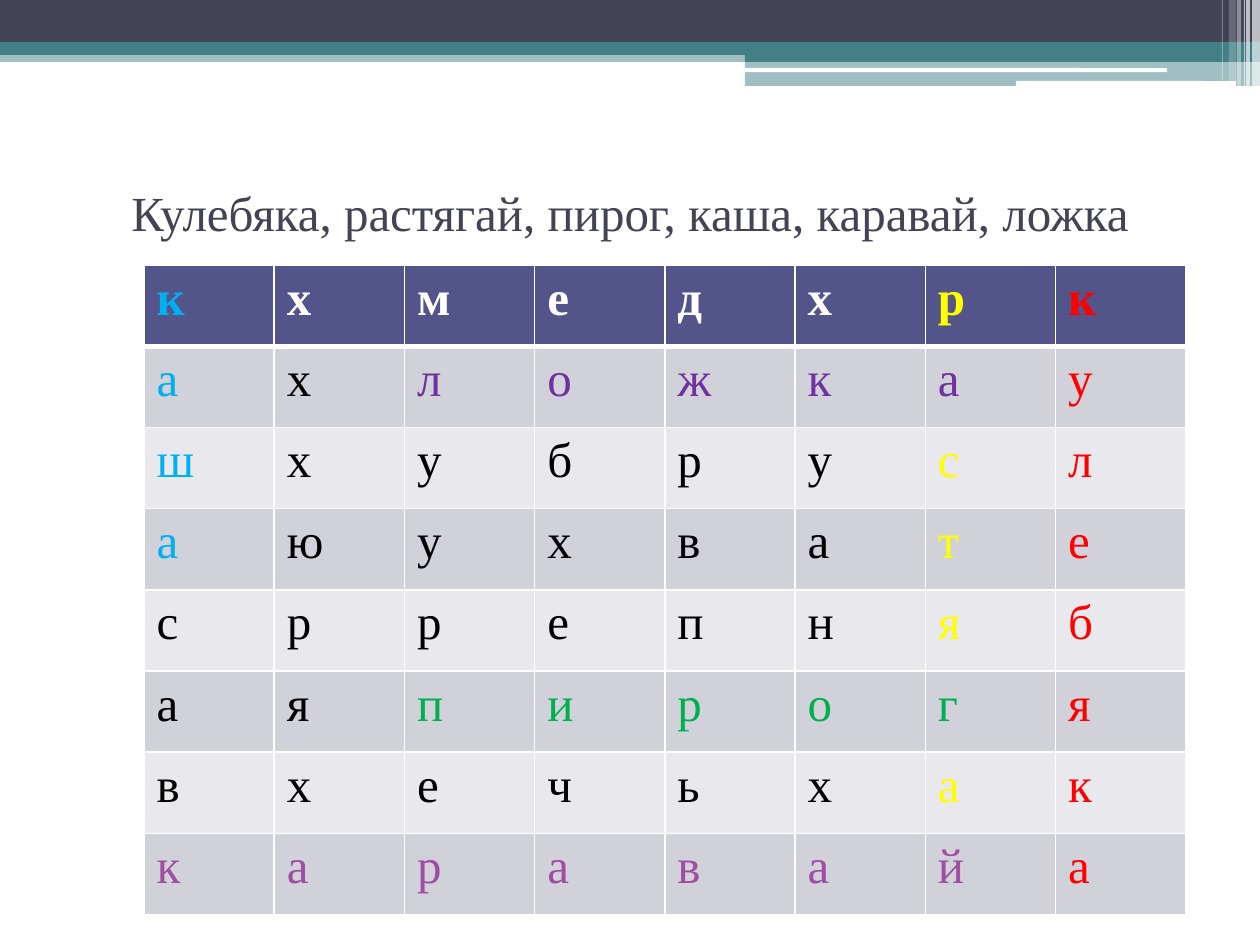
from dataclasses import dataclass

from lxml.etree import SubElement
from pptx import Presentation
from pptx.dml.color import RGBColor
from pptx.enum.shapes import MSO_SHAPE as Shape
from pptx.enum.text import MSO_ANCHOR as Anchor, PP_ALIGN as Align
from pptx.oxml.ns import qn
from pptx.util import Emu, Pt

PX_PER_INCH = 126


@dataclass(frozen=True)
class Theme:
    font: str = "Times New Roman"
    size: int = 28
    dark: str = "424456"
    teal: str = "438086"
    white: str = "FFFFFF"
    header: str = "53548A"
    bands: tuple = ("D1D1DA", "E9E9ED")
    thin: int = 1
    thick: int = 3


THEME = Theme()

# Each found word has its own letter colour
INKS = {
    "w": "FFFFFF",  # header letters
    ".": "000000",  # letters outside the words
    "b": "00B0F0",  # каша
    "v": "7030A0",  # ложка
    "y": "FFFF00",  # растягай
    "r": "FF0000",  # кулебяка
    "g": "00B050",  # пирог
    "p": "A04DA3",  # каравай
}

# Letters of a row and the ink of each letter
PUZZLE = [
    ("кхмедхрк", "bwwwwwyr"),
    ("ахложкау", "b.vvvvvr"),
    ("шхубрусл", "b.....yr"),
    ("аюухвате", "b.....yr"),
    ("сррепняб", "......yr"),
    ("аяпирогя", "..gggggr"),
    ("вхечьхак", "......yr"),
    ("каравайа", "pppppppr"),
]

# Left, top, width, height, colour, opacity in percent
BANDS = [
    (0, 50, 1260, 12, THEME.teal, 50),
    (0, 0, 1260, 42, THEME.dark, 100),
    (0, 42, 1260, 13, THEME.teal, 100),
    (745, 49, 515, 13, THEME.teal, 100),
    (745, 61, 515, 25, THEME.teal, 50),
]
PILLS = [
    (745, 68, 422, 4, THEME.white, 100),
    (1016, 81, 220, 5, THEME.white, 100),
]
STRIPES = [
    (1252, 0, 8, 86, THEME.white, 65),
    (1246, 0, 4, 86, THEME.white, 65),
    (1244, 0, 1, 86, THEME.white, 60),
    (1237, 0, 4, 86, THEME.white, 40),
    (1229, 0, 7, 81, THEME.white, 20),
    (1222, 0, 1, 81, THEME.white, 30),
]


def px(n):
    return Emu(round(n * 914400 / PX_PER_INCH))


def rgb(code):
    return RGBColor.from_string(code)


def style_run(r, color, bold=False):
    r.font.name = THEME.font
    r.font.size = Pt(THEME.size)
    r.font.bold = bold
    r.font.color.rgb = rgb(color)


def add_bar(slide, kind, left, top, width, height, color, opacity):
    sp = slide.shapes.add_shape(kind, px(left), px(top), px(width), px(height))
    sp.shadow.inherit = False
    sp.line.fill.background()
    sp.fill.solid()
    sp.fill.fore_color.rgb = rgb(color)
    if opacity < 100:
        clr = sp.fill._xPr.find(qn("a:solidFill"))[0]
        SubElement(clr, qn("a:alpha"), val=str(opacity * 1000))


def add_title(slide, text, left, top, width, height):
    box = slide.shapes.add_textbox(px(left), px(top), px(width), px(height))
    tf = box.text_frame
    tf.word_wrap = True
    tf.vertical_anchor = Anchor.MIDDLE
    tf.text = text
    p = tf.paragraphs[0]
    p.alignment = Align.CENTER
    style_run(p.runs[0], THEME.dark)


def set_borders(cell, top, bottom):
    tc_pr = cell._tc.get_or_add_tcPr()
    sides = {"L": THEME.thin, "R": THEME.thin, "T": top, "B": bottom}
    for side, width in sides.items():
        ln = SubElement(tc_pr, qn(f"a:ln{side}"), w=str(Pt(width)))
        fill = SubElement(ln, qn("a:solidFill"))
        SubElement(fill, qn("a:srgbClr"), val=THEME.white)


def fill_cell(cell, row, letter, ink):
    header = row == 0
    # The heavy rule lies between the header and the first body row
    set_borders(cell,
                top=THEME.thick if row == 1 else THEME.thin,
                bottom=THEME.thick if header else THEME.thin)
    cell.fill.solid()
    cell.fill.fore_color.rgb = rgb(THEME.header if header else THEME.bands[(row - 1) % 2])
    cell.text_frame.text = letter
    style_run(cell.text_frame.paragraphs[0].runs[0], INKS[ink], bold=header)


def add_puzzle(slide, left, top, width, height):
    rows, cols = len(PUZZLE), len(PUZZLE[0][0])
    frame = slide.shapes.add_table(rows, cols, px(left), px(top), px(width), px(height))
    table = frame.table
    for i, (letters, inks) in enumerate(PUZZLE):
        for j, (letter, ink) in enumerate(zip(letters, inks)):
            fill_cell(table.cell(i, j), i, letter, ink)


def main():
    prs = Presentation()
    prs.slide_width, prs.slide_height = px(1260), px(945)
    slide = prs.slides.add_slide(prs.slide_layouts[6])

    # Decorated top edge
    for kind, bars in ((Shape.RECTANGLE, BANDS),
                       (Shape.ROUNDED_RECTANGLE, PILLS),
                       (Shape.RECTANGLE, STRIPES)):
        for bar in bars:
            add_bar(slide, kind, *bar)

    # Words to find and the letter grid
    add_title(slide, "Кулебяка, растягай, пирог, каша, каравай, ложка",
              63, 158, 1134, 107)
    add_puzzle(slide, 144, 265, 1042, 650)

    prs.save("out.pptx")


if __name__ == "__main__":
    main()
